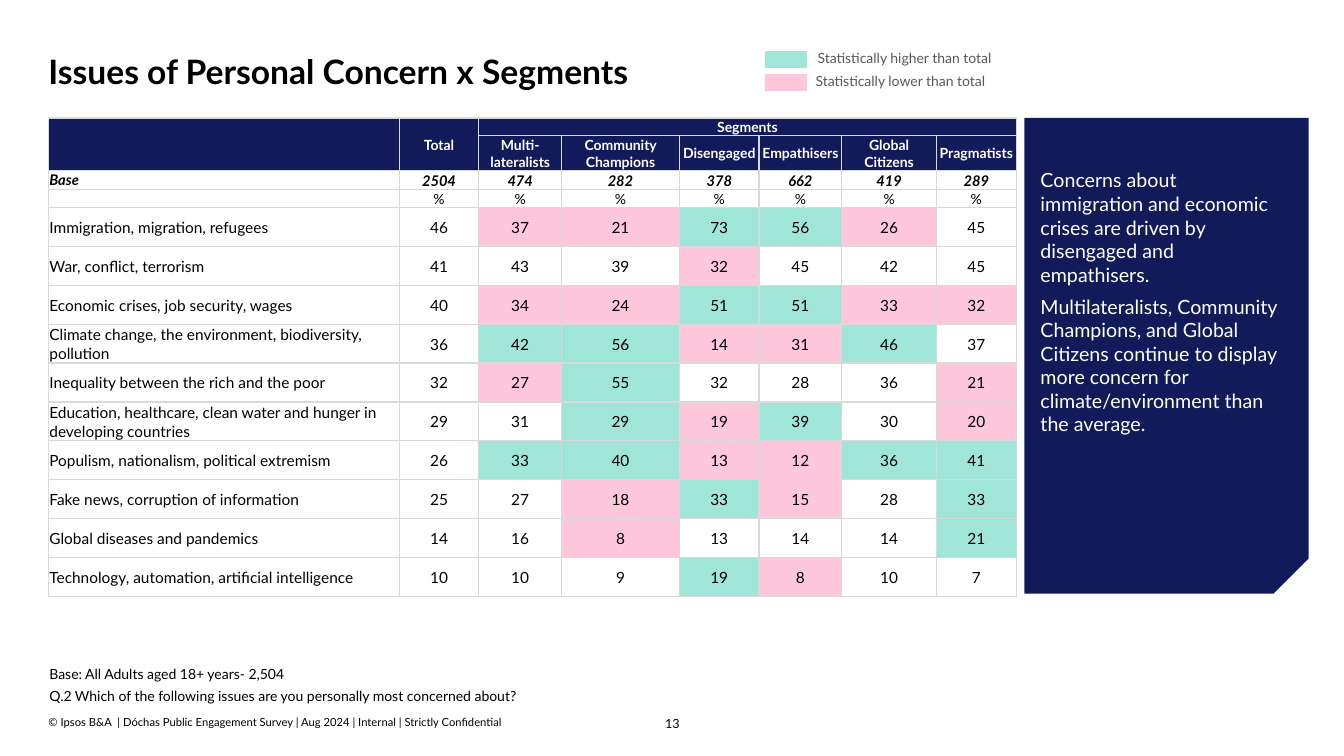
import lxml.etree
import pptx
import pptx.dml.color
import pptx.enum.shapes
import pptx.enum.text
import pptx.oxml.ns
import pptx.util

Inches = pptx.util.Inches
Pt = pptx.util.Pt
Anchor = pptx.enum.text.MSO_ANCHOR
Align = pptx.enum.text.PP_ALIGN
Shape = pptx.enum.shapes.MSO_SHAPE

NAVY, GREEN, PINK = "121B5A", "9FE5D8", "FFC7DC"
BLACK, WHITE, GREY, BORDER = "000000", "FFFFFF", "595959", "D9D9D9"

SEGMENTS = ["Multi-lateralists", "Community Champions", "Disengaged",
            "Empathisers", "Global Citizens", "Pragmatists"]
BASES = "2504 474 282 378 662 419 289"
ISSUES = [
    ("Immigration, migration, refugees", "46 37- 21- 73+ 56+ 26- 45"),
    ("War, conflict, terrorism", "41 43 39 32- 45 42 45"),
    ("Economic crises, job security, wages", "40 34- 24- 51+ 51+ 33- 32-"),
    ("Climate change, the environment, biodiversity, pollution",
     "36 42+ 56+ 14- 31- 46+ 37"),
    ("Inequality between the rich and the poor", "32 27- 55+ 32 28 36 21-"),
    ("Education, healthcare, clean water and hunger in developing countries",
     "29 31 29+ 19- 39+ 30 20-"),
    ("Populism, nationalism, political extremism", "26 33+ 40+ 13- 12- 36+ 41+"),
    ("Fake news, corruption of information", "25 27 18- 33+ 15- 28 33+"),
    ("Global diseases and pandemics", "14 16 8- 13 14 14 21+"),
    ("Technology, automation, artificial intelligence", "10 10 9 19+ 8- 10 7"),
]
COLUMN_WIDTHS = [3.48, 0.79, 0.82, 1.17, 0.79, 0.82, 0.94, 0.79]
HEADER_HEIGHTS = [0.17, 0.33, 0.19, 0.17]
TABLE_HEIGHT = 4.72


def color(value):
    return pptx.dml.color.RGBColor.from_string(value)


class SlideBuilder:
    font = "Lato"

    def __init__(self, presentation):
        self.slide = presentation.slides.add_slide(presentation.slide_layouts[5])

    def fill_frame(self, frame, lines, size, ink=BLACK, bold=False, italic=False,
                   align=Align.LEFT, anchor=Anchor.TOP, spacing=1.0, after=0,
                   margins=(0, 0, 0, 0)):
        frame.word_wrap = True
        frame.vertical_anchor = anchor
        (frame.margin_left, frame.margin_top,
         frame.margin_right, frame.margin_bottom) = map(Inches, margins)
        for index, line in enumerate(lines):
            paragraph = frame.paragraphs[0] if index == 0 else frame.add_paragraph()
            paragraph.alignment = align
            paragraph.line_spacing = spacing
            paragraph.space_before = Pt(0)
            paragraph.space_after = Pt(after)
            run = paragraph.add_run()
            run.text = line
            run.font.name = self.font
            run.font.size = Pt(size)
            run.font.bold = bold
            run.font.italic = italic
            run.font.color.rgb = color(ink)

    def title(self, text, box):
        shape = self.slide.shapes.title
        shape.left, shape.top, shape.width, shape.height = map(Inches, box)
        self.fill_frame(shape.text_frame, [text], 24, bold=True,
                        anchor=Anchor.BOTTOM, spacing=0.9)
        shape.text_frame.auto_size = pptx.enum.text.MSO_AUTO_SIZE.NONE

    def text(self, lines, box, size, **style):
        shape = self.slide.shapes.add_textbox(*map(Inches, box))
        self.fill_frame(shape.text_frame, lines, size, **style)

    def shape(self, kind, box, fill, line=None):
        shape = self.slide.shapes.add_shape(kind, *map(Inches, box))
        shape.shadow.inherit = False
        shape.fill.solid()
        shape.fill.fore_color.rgb = color(fill)
        if line:
            shape.line.color.rgb = color(line)
            shape.line.width = Pt(1)
        else:
            shape.line.fill.background()
        return shape

    def panel(self, lines, box):
        shape = self.shape(Shape.SNIP_1_RECTANGLE, box, NAVY)
        shape.adjustments[0] = 0.124
        shape.rotation = 90
        self.fill_frame(shape.text_frame, lines, 14, ink=WHITE, after=6,
                        margins=(0.5, 0.08, 0.16, 0.16))
        properties = shape.text_frame._txBody.find(pptx.oxml.ns.qn("a:bodyPr"))
        properties.set("vert", "vert270")

    def table(self, left, top, widths, heights):
        table = self.slide.shapes.add_table(
            len(heights), len(widths), Inches(left), Inches(top),
            Inches(sum(widths)), Inches(sum(heights))).table
        table.first_row = table.horz_banding = False
        for column, width in zip(table.columns, widths):
            column.width = Inches(width)
        for row, height in zip(table.rows, heights):
            row.height = Inches(height)
        return table

    def cell(self, cell, text, size, fill=WHITE, anchor=Anchor.MIDDLE, **style):
        qn = pptx.oxml.ns.qn
        self.fill_frame(cell.text_frame, [text] if text else [], size, **style)
        cell.vertical_anchor = anchor
        cell.margin_left = cell.margin_top = cell.margin_right = Inches(0.01)
        cell.margin_bottom = 0
        if not text:
            paragraph = cell.text_frame.paragraphs[0]
            lxml.etree.SubElement(paragraph._p, qn("a:endParaRPr"), sz=str(size * 100))
        properties = cell._tc.get_or_add_tcPr()
        for edge in ("a:lnL", "a:lnR", "a:lnT", "a:lnB"):
            line = lxml.etree.SubElement(properties, qn(edge), w=str(Pt(1)))
            solid = lxml.etree.SubElement(line, qn("a:solidFill"))
            lxml.etree.SubElement(solid, qn("a:srgbClr"), val=BORDER)
        cell.fill.solid()
        cell.fill.fore_color.rgb = color(fill)
        properties.append(properties.find(qn("a:solidFill")))

    def issues_table(self, left, top):
        issue_height = (TABLE_HEIGHT - sum(HEADER_HEIGHTS)) / len(ISSUES)
        table = self.table(left, top, COLUMN_WIDTHS,
                           HEADER_HEIGHTS + [issue_height] * len(ISSUES))
        headers = [["", "Total", "Segments"] + [""] * 5, ["", ""] + SEGMENTS]
        for row, labels in enumerate(headers):
            for column, label in enumerate(labels):
                anchor = Anchor.TOP if label == "Segments" else Anchor.MIDDLE
                self.cell(table.cell(row, column), label, 10, NAVY, anchor,
                          ink=WHITE, bold=True, align=Align.CENTER)
        for column in (0, 1):
            table.cell(0, column).merge(table.cell(1, column))
        table.cell(0, 2).merge(table.cell(0, 7))

        self.cell(table.cell(2, 0), "Base", 10.5, anchor=Anchor.TOP,
                  bold=True, italic=True)
        self.cell(table.cell(3, 0), "", 10)
        for column, base in enumerate(BASES.split(), 1):
            self.cell(table.cell(2, column), base, 10.5, bold=True, italic=True,
                      align=Align.CENTER)
            self.cell(table.cell(3, column), "%", 10, align=Align.CENTER)

        fills = {"+": GREEN, "-": PINK}
        for row, (issue, values) in enumerate(ISSUES, len(HEADER_HEIGHTS)):
            self.cell(table.cell(row, 0), issue, 11)
            for column, value in enumerate(values.split(), 1):
                self.cell(table.cell(row, column), value.rstrip("+-"), 11,
                          fills.get(value[-1], WHITE), align=Align.CENTER)


def main():
    presentation = pptx.Presentation()
    presentation.slide_width = Inches(13.33)
    presentation.slide_height = Inches(7.5)
    builder = SlideBuilder(presentation)

    builder.title("Issues of Personal Concern x Segments", (0.48, 0.13, 12.34, 0.78))
    builder.issues_table(0.48, 1.17)
    builder.panel([
        "Concerns about immigration and economic crises are driven by "
        "disengaged and empathisers.",
        "Multilateralists, Community Champions, and Global Citizens continue to "
        "display more concern for climate/environment than the average.",
    ], (9.21, 2.12, 4.72, 2.82))

    legend = [("Statistically higher than total", GREEN, 0.5, 8.01, 0.44),
              ("Statistically lower than total", PINK, 0.73, 7.99, 0.67)]
    for label, fill, swatch_top, label_left, label_top in legend:
        builder.shape(Shape.RECTANGLE, (7.58, swatch_top, 0.43, 0.18), fill, WHITE)
        builder.text([label], (label_left, label_top, 2.15, 0.27), 10, ink=GREY,
                     margins=(0.1, 0.05, 0.1, 0.05))

    builder.text([
        "Base: All Adults aged 18+ years- 2,504",
        "Q.2 Which of the following issues are you personally most concerned about?",
    ], (0.49, 6.58, 10.22, 0.36), 10, spacing=1.15, after=2)
    builder.text(["© Ipsos B&A  | Dóchas Public Engagement Survey | Aug 2024 | "
                  "Internal | Strictly Confidential"],
                 (0.48, 7.1, 6.1, 0.13), 8, anchor=Anchor.BOTTOM)
    builder.text(["13"], (6.4, 7.09, 0.54, 0.15), 9, align=Align.CENTER, spacing=1.1)
    presentation.save("out.pptx")


if __name__ == "__main__":
    main()
